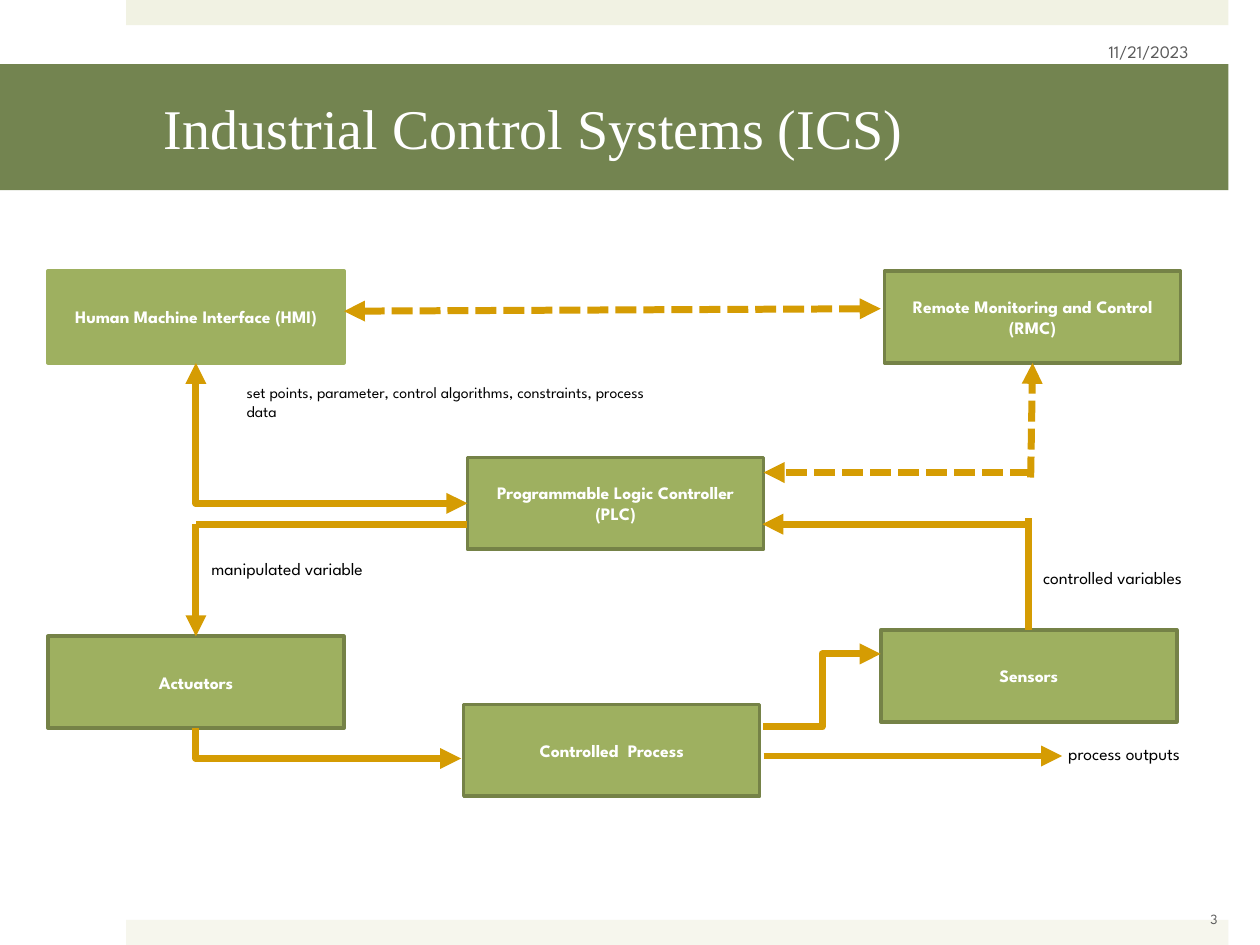
import pptx
import pptx.util
import pptx.dml.color
import pptx.enum.dml
import pptx.enum.shapes
import pptx.enum.text
import pptx.oxml
import pptx.oxml.ns

RGBColor = pptx.dml.color.RGBColor
ALIGN = pptx.enum.text.PP_ALIGN
ANCHOR = pptx.enum.text.MSO_ANCHOR
CONNECTOR = pptx.enum.shapes.MSO_CONNECTOR

WHITE = RGBColor(0xFF, 0xFF, 0xFF)
BLACK = RGBColor(0x00, 0x00, 0x00)
GRAY = RGBColor(0x59, 0x59, 0x59)
CREAM = RGBColor(0xF1, 0xF2, 0xE3)
PALE_CREAM = RGBColor(0xF6, 0xF6, 0xED)
OLIVE = RGBColor(0x73, 0x84, 0x50)
GREEN = RGBColor(0x9E, 0xB0, 0x60)
DARK_GREEN = RGBColor(0x75, 0x82, 0x47)
GOLD = RGBColor(0xD5, 0x9C, 0x03)

COLUMNS, ROWS = 100, 75
BOX_SIZE = 23.5, 7.3
TOP, LEFT, BOTTOM = 0, 1, 2


class SlideBuilder:
    font = "League Spartan"
    title_font = "Times New Roman"

    def __init__(self, prs):
        self.cell_w = prs.slide_width / COLUMNS
        self.cell_h = prs.slide_height / ROWS
        self.s = prs.slides.add_slide(prs.slide_layouts[6])

    def grid(self, x, y):
        return round(x * self.cell_w), round(y * self.cell_h)

    def add_text(self, sp, text, size, color, align=ALIGN.LEFT, anchor=ANCHOR.TOP,
                 bold=False, font=None):
        tf = sp.text_frame
        tf.word_wrap = True
        tf.vertical_anchor = anchor
        p = tf.paragraphs[0]
        p.alignment = align
        r = p.add_run()
        r.text = text
        r.font.name = font or self.font
        r.font.size = pptx.util.Pt(size)
        r.font.bold = bold
        r.font.color.rgb = color

    def rect(self, x, y, w, h, fill, line=None):
        sp = self.s.shapes.add_shape(pptx.enum.shapes.MSO_SHAPE.RECTANGLE,
                                     *self.grid(x, y), *self.grid(w, h))
        sp.shadow.inherit = False
        sp.fill.solid()
        sp.fill.fore_color.rgb = fill
        if line is None:
            sp.line.fill.background()
        else:
            sp.line.color.rgb = line
            sp.line.width = pptx.util.Pt(2)
        return sp

    def title(self, text, y, w, h):
        sp = self.rect(0, y, w, h, OLIVE)
        sp.text_frame.margin_left = pptx.util.Inches(1.3)
        sp.text_frame.margin_right = pptx.util.Inches(0.3)
        self.add_text(sp, text, 32, WHITE, anchor=ANCHOR.MIDDLE, font=self.title_font)

    def box(self, text, x, y, line=DARK_GREEN):
        sp = self.rect(x, y, *BOX_SIZE, GREEN, line)
        self.add_text(sp, text, 10, WHITE, ALIGN.CENTER, ANCHOR.MIDDLE, bold=True)
        return sp

    def label(self, text, x, y, w, h, size=10, color=BLACK, **style):
        sp = self.s.shapes.add_textbox(*self.grid(x, y), *self.grid(w, h))
        self.add_text(sp, text, size, color, **style)

    def connector(self, start, end, kind=CONNECTOR.STRAIGHT, begin=None, finish=None,
                  dashed=False, head=False, tail=True):
        c = self.s.shapes.add_connector(kind, *self.grid(*start), *self.grid(*end))
        if begin:
            c.begin_connect(*begin)
        if finish:
            c.end_connect(*finish)
        c.line.color.rgb = GOLD
        c.line.width = pptx.util.Pt(4)
        if dashed:
            c.line.dash_style = pptx.enum.dml.MSO_LINE.SQUARE_DOT
        sppr = c._element.spPr
        ln = sppr.find(pptx.oxml.ns.qn("a:ln"))
        ns = pptx.oxml.ns.nsdecls("a")
        for tag, wanted in (("a:headEnd", head), ("a:tailEnd", tail)):
            if wanted:
                ln.append(pptx.oxml.parse_xml(f'<{tag} {ns} type="triangle"/>'))
        sppr.append(pptx.oxml.parse_xml(f"<a:effectLst {ns}/>"))
        return c

    def corner(self, start, end, **options):
        c = self.connector(start, end, CONNECTOR.ELBOW, **options)
        x, y, w, h = c.left, c.top, c.width, c.height
        c.left, c.top = x + (w - h) // 2, y + (h - w) // 2
        c.width, c.height = h, w
        sppr = c._element.spPr
        sppr.find(pptx.oxml.ns.qn("a:prstGeom")).set("prst", "bentConnector2")
        xfrm = sppr.find(pptx.oxml.ns.qn("a:xfrm"))
        xfrm.set("rot", "16200000")
        xfrm.set("flipH", "1")


def main():
    prs = pptx.Presentation()
    prs.slide_width = pptx.util.Inches(10)
    prs.slide_height = pptx.util.Inches(7.5)
    b = SlideBuilder(prs)

    b.rect(10, 0, 87.5, 2, CREAM)
    b.rect(10, 73, 87.5, 2, PALE_CREAM)
    b.title("Industrial Control Systems (ICS)", 5.1, 97.5, 10)

    hmi = b.box("Human Machine Interface (HMI)", 3.8, 21.5, GREEN)
    plc = b.box("Programmable Logic Controller (PLC)", 37.1, 36.3)
    rmc = b.box("Remote Monitoring and Control (RMC)", 70.2, 21.5)
    actuators = b.box("Actuators", 3.8, 50.5)
    sensors = b.box("Sensors", 69.9, 50)
    b.box("Controlled  Process", 36.8, 55.9)

    left_x, sensor_x, remote_x = 15.55, 81.65, 81.8
    loop_y, remote_y = 41.6, 37.5
    b.corner((left_x, 28.8), (37.1, 40), begin=(hmi, BOTTOM), finish=(plc, LEFT), head=True)
    b.connector((37.1, loop_y), (left_x, loop_y), tail=False)
    b.connector((left_x, loop_y), (left_x, 50.5), finish=(actuators, TOP))
    b.corner((left_x, 57.8), (36.6, 60.2), begin=(actuators, BOTTOM))
    b.connector((60.6, 57.7), (69.9, 51.9), CONNECTOR.ELBOW)
    b.connector((60.6, 60), (84.3, 60))
    b.connector((sensor_x, 50), (sensor_x, 41.1), begin=(sensors, TOP), tail=False)
    b.connector((sensor_x, loop_y), (60.5, loop_y))
    b.connector((remote_x, 37.9), (remote_x, 28.8), finish=(rmc, BOTTOM), dashed=True)
    b.connector((remote_x, remote_y), (60.6, remote_y), dashed=True)
    b.connector((27.3, 24.7), (69.9, 24.5), dashed=True, head=True)

    b.label("set points, parameter, control algorithms, constraints, process data",
            18.6, 29.9, 35.1, 4.1, size=9)
    b.label("manipulated variable", 15.8, 43.8, 35.7, 2.7)
    b.label("controlled variables", 81.8, 44.5, 17, 2.7)
    b.label("process outputs", 83.8, 58.5, 13.6, 2.7)
    b.label("3", 93.4, 71.4, 5.9, 3.1, size=8, color=GRAY,
            align=ALIGN.CENTER, anchor=ANCHOR.MIDDLE)
    b.label("11/21/2023", 72, 2.1, 23.3, 4, color=GRAY,
            align=ALIGN.RIGHT, anchor=ANCHOR.MIDDLE)

    prs.save("out.pptx")


if __name__ == "__main__":
    main()
